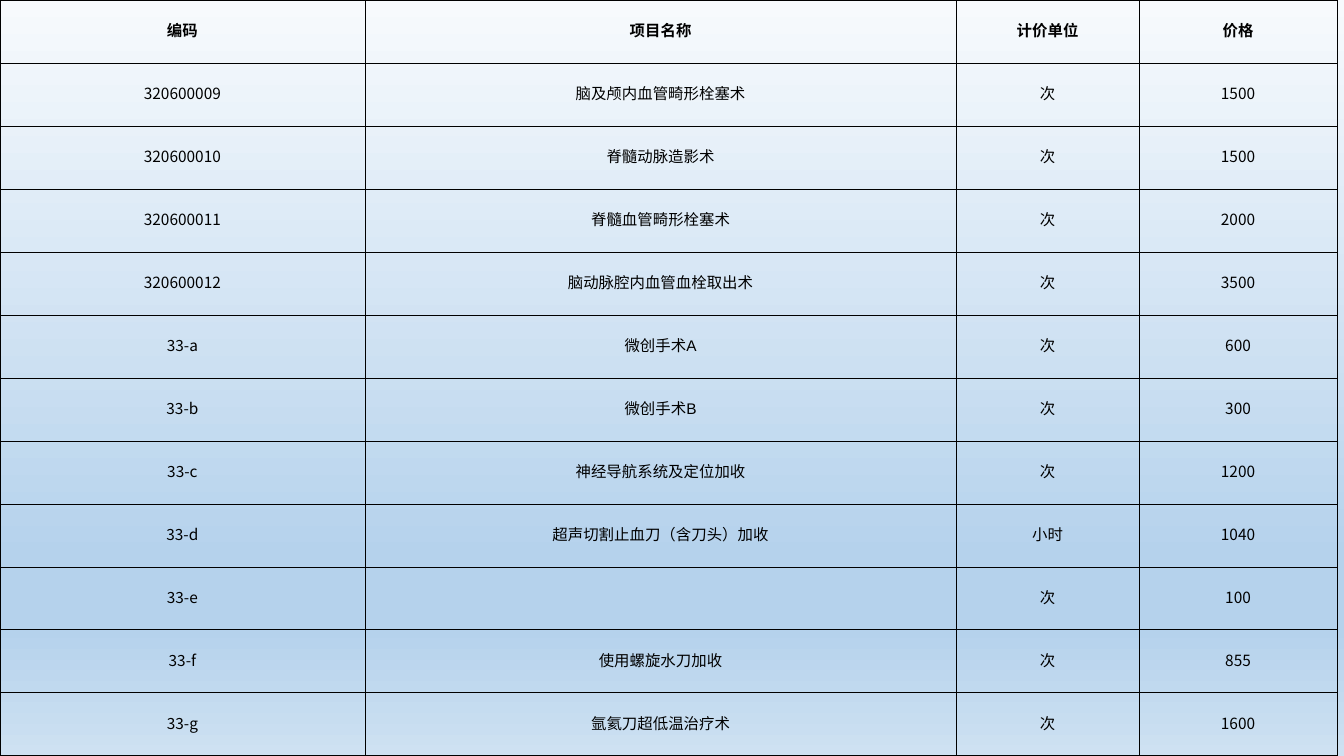
import dataclasses
import lxml.etree
import pptx
import pptx.dml.color
import pptx.enum.lang
import pptx.enum.text
import pptx.oxml.ns
import pptx.util

Pt = pptx.util.Pt
qn = pptx.oxml.ns.qn


@dataclasses.dataclass(frozen=True)
class Theme:
    ink: str = "000000"
    stops: tuple = ((0, "F7FAFD"), (74, "B5D2EC"), (83, "B5D2EC"), (100, "CEE1F2"))
    latin: str = "Arial"
    han: str = "Noto Sans CJK SC"
    size: float = 11
    line: float = 0.5


WIDTH, HEIGHT = 960, 540
COLS = (260.6, 422.6, 130.3, 141.8)
HEAD = ("编码", "项目名称", "计价单位", "价格")
ITEMS = (
    ("320600009", "脑及颅内血管畸形栓塞术", "次", "1500"),
    ("320600010", "脊髓动脉造影术", "次", "1500"),
    ("320600011", "脊髓血管畸形栓塞术", "次", "2000"),
    ("320600012", "脑动脉腔内血管血栓取出术", "次", "3500"),
    ("33-a", "微创手术A", "次", "600"),
    ("33-b", "微创手术B", "次", "300"),
    ("33-c", "神经导航系统及定位加收", "次", "1200"),
    ("33-d", "超声切割止血刀（含刀头）加收", "小时", "1040"),
    ("33-e", "", "次", "100"),
    ("33-f", "使用螺旋水刀加收", "次", "855"),
    ("33-g", "氩氦刀超低温治疗术", "次", "1600"),
)


def apply(target, values):
    for name, value in values.items():
        setattr(target, name, value)


def add(parent, tag, **attrs):
    return lxml.etree.SubElement(parent, qn(tag), attrs)


class Page:
    def __init__(self, slide, theme):
        self.slide = slide
        self.theme = theme

    def backdrop(self):
        """Fill the slide with the theme's top-to-bottom gradient."""
        fill = self.slide.background.fill
        fill.gradient()
        fill.gradient_angle = 270
        stops = next(self.slide.element.iter(qn("a:gsLst")))
        for stop in list(stops):
            stops.remove(stop)
        for place, color in self.theme.stops:
            stop = add(stops, "a:gs", pos=str(place * 1000))
            add(stop, "a:srgbClr", val=color)

    def table(self, rows, widths, height):
        frame = self.slide.shapes.add_table(
            len(rows), len(widths), 0, 0, Pt(sum(widths)), Pt(height))
        table = frame.table
        apply(table, {"first_row": False, "horz_banding": False})
        for col, width in zip(table.columns, widths):
            col.width = Pt(width)
        for r, row in enumerate(rows):
            table.rows[r].height = Pt(height / len(rows))
            for c, text in enumerate(row):
                cell = table.cell(r, c)
                self.frame(cell)
                if text:
                    self.label(cell, text, bold=r == 0)

    def frame(self, cell):
        """Give a cell its borders, insets and clear fill."""
        apply(cell, {
            "margin_left": Pt(0.72), "margin_right": Pt(0.72),
            "margin_top": Pt(0.72), "margin_bottom": Pt(3.6),
            "vertical_anchor": pptx.enum.text.MSO_ANCHOR.MIDDLE,
        })
        props = cell._tc.get_or_add_tcPr()
        for side in "LRTB":
            line = add(props, f"a:ln{side}", w=str(Pt(self.theme.line)))
            add(add(line, "a:solidFill"), "a:srgbClr", val=self.theme.ink)
        cell.fill.background()

    def label(self, cell, text, bold):
        para = cell.text_frame.paragraphs[0]
        para.alignment = pptx.enum.text.PP_ALIGN.CENTER
        run = para.add_run()
        run.text = text
        theme = self.theme
        apply(run.font, {
            "size": Pt(theme.size),
            "bold": bold,
            "name": theme.han if text.isascii() else theme.latin,
            "language_id": pptx.enum.lang.MSO_LANGUAGE_ID.SIMPLIFIED_CHINESE,
        })
        run.font.color.rgb = pptx.dml.color.RGBColor.from_string(theme.ink)
        latin = next(run._r.iter(qn("a:latin")))
        add(latin.getparent(), "a:ea", typeface=theme.han)


def main():
    deck = pptx.Presentation()
    apply(deck, {"slide_width": Pt(WIDTH), "slide_height": Pt(HEIGHT)})
    page = Page(deck.slides.add_slide(deck.slide_layouts[6]), Theme())
    page.backdrop()
    page.table((HEAD, *ITEMS), COLS, HEIGHT)
    deck.save("out.pptx")


if __name__ == "__main__":
    main()
